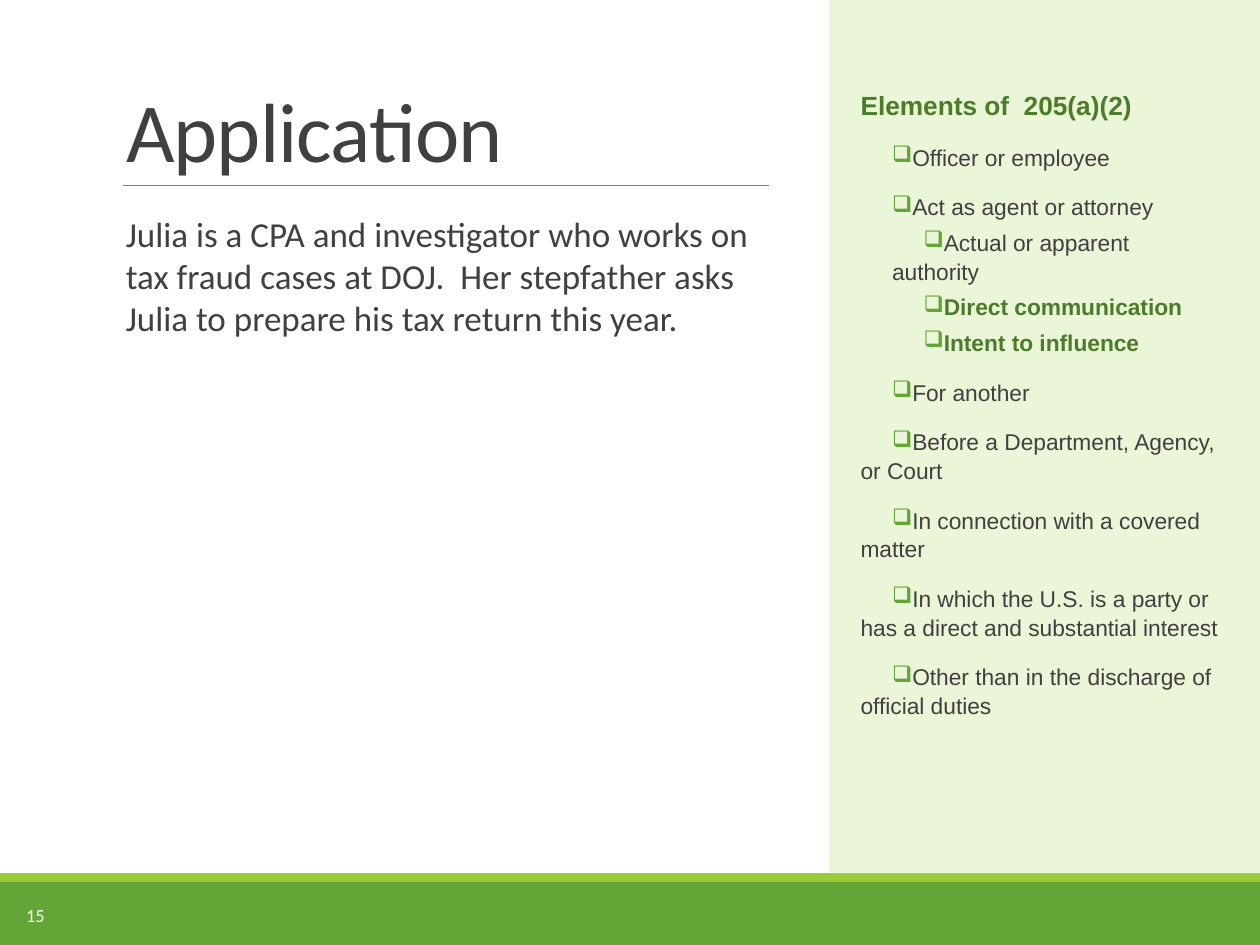
import pptx
import pptx.util
import pptx.dml.color
import pptx.enum.shapes
import pptx.enum.text
import pptx.oxml.ns
import lxml.etree

# Content
TITLE = "Application"
SCENARIO = ("Julia is a CPA and investigator who works on tax fraud cases at DOJ.  "
            "Her stepfather asks Julia to prepare his tax return this year.")
PAGE = "15"
HEADING = "Elements of  205(a)(2)"
ELEMENTS = [  # level, text, highlighted
    (1, "Officer or employee", False),
    (1, "Act as agent or attorney", False),
    (2, "Actual or apparent authority", False),
    (2, "Direct communication", True),
    (2, "Intent to influence", True),
    (1, "For another", False),
    (1, "Before a Department, Agency, or Court", False),
    (1, "In connection with a covered matter", False),
    (1, "In which the U.S. is a party or has a direct and substantial interest", False),
    (1, "Other than in the discharge of official duties", False),
]

# Style and layout, in inches
INK, DARK_GREEN, GREEN, LIME = "404040", "4A7C29", "63A537", "99CB38"
PALE, WHITE, GREY = "EBF5D7", "FFFFFF", "808080"
WIDTH, HEIGHT = 10, 7.5
FOOTER_TOP, STRIPE = 7, 0.07
CONTENT_BOTTOM = FOOTER_TOP - STRIPE
LEFT, COLUMN = 0.9, 5.2
RULE_LEFT, RULE_TOP = 0.98, 1.47
PANEL_LEFT = 6.58
INDENT = 0.25

inches, points = pptx.util.Inches, pptx.util.Pt
deck = pptx.Presentation()
deck.slide_width, deck.slide_height = inches(WIDTH), inches(HEIGHT)
slide = deck.slides.add_slide(deck.slide_layouts[5])


def colour(value):
    return pptx.dml.color.RGBColor.from_string(value)


def style(paragraph, size, font, ink, bold=False):
    for run in paragraph.runs:
        run.font.size, run.font.name, run.font.bold = points(size), font, bold
        run.font.color.rgb = colour(ink)


def place(shape, left, top, width, height):
    shape.left, shape.top = inches(left), inches(top)
    shape.width, shape.height = inches(width), inches(height)


def add_block(left, top, width, height, fill):
    block = slide.shapes.add_shape(pptx.enum.shapes.MSO_SHAPE.RECTANGLE,
                                   *map(inches, (left, top, width, height)))
    block.shadow.inherit = False
    block.fill.solid()
    block.fill.fore_color.rgb = colour(fill)
    block.line.fill.background()
    return block


def add_text(left, top, width, height, text, size, ink, anchor):
    box = slide.shapes.add_textbox(*map(inches, (left, top, width, height)))
    frame = box.text_frame
    frame.word_wrap, frame.vertical_anchor = True, anchor
    frame.text = text
    style(frame.paragraphs[0], size, "Calibri", ink)


def add_bullet(paragraph, level):
    properties = paragraph._p.get_or_add_pPr()
    properties.set("marL", str(inches(INDENT * (level - 1))))
    properties.set("indent", str(inches(INDENT)))
    qn = pptx.oxml.ns.qn
    tint = lxml.etree.SubElement(properties, qn("a:buClr"))
    lxml.etree.SubElement(tint, qn("a:srgbClr"), val=GREEN)
    lxml.etree.SubElement(properties, qn("a:buChar"), char="❑")


# Footer bands
add_block(0, FOOTER_TOP, WIDTH, HEIGHT - FOOTER_TOP, GREEN)
add_block(0, CONTENT_BOTTOM, WIDTH, STRIPE, LIME)

# Rule under the title
rule = slide.shapes.add_connector(
    pptx.enum.shapes.MSO_CONNECTOR.STRAIGHT,
    *map(inches, (RULE_LEFT, RULE_TOP, LEFT + COLUMN, RULE_TOP)))
rule.line.color.rgb, rule.line.width = colour(GREY), points(0.5)
lxml.etree.SubElement(rule._element.spPr, pptx.oxml.ns.qn("a:effectLst"))

# Title
ANCHOR = pptx.enum.text.MSO_ANCHOR
title = slide.shapes.title
place(title, LEFT, 0.31, 8.25, 1.16)
title.text_frame.text = TITLE
title.text_frame.vertical_anchor = ANCHOR.BOTTOM
heading = title.text_frame.paragraphs[0]
heading.alignment = pptx.enum.text.PP_ALIGN.LEFT
style(heading, 48, "Calibri", INK)
heading.runs[0].font._element.set("spc", "-50")

# Scenario and page number
add_text(LEFT, 1.64, COLUMN, 3.46, SCENARIO, 20, INK, ANCHOR.TOP)
add_text(0.11, 7.06, 0.54, 0.4, PAGE, 10.5, WHITE, ANCHOR.MIDDLE)

# Side panel with the checklist
panel = add_block(PANEL_LEFT, 0, WIDTH - PANEL_LEFT, CONTENT_BOTTOM, PALE)
checklist = panel.text_frame
checklist.word_wrap, checklist.vertical_anchor = True, ANCHOR.TOP
checklist.margin_left, checklist.margin_top = inches(0.25), inches(0.7)
checklist.margin_right, checklist.margin_bottom = inches(0.3), inches(0.05)
checklist.text = "\n".join([HEADING] + [text for _, text, _ in ELEMENTS])
for paragraph in checklist.paragraphs:
    paragraph.alignment = pptx.enum.text.PP_ALIGN.LEFT
    paragraph.line_spacing = 1.05
    paragraph.space_after = points(12)
style(checklist.paragraphs[0], 15, "Arial", DARK_GREEN, True)

next_levels = [level for level, _, _ in ELEMENTS[1:]] + [1]
for paragraph, (level, _, marked), following in zip(
        checklist.paragraphs[1:], ELEMENTS, next_levels):
    if following == 2:  # sub-items sit close to the line above
        paragraph.space_after = points(4)
    add_bullet(paragraph, level)
    style(paragraph, 13, "Arial", DARK_GREEN if marked else INK, marked)

deck.save("out.pptx")
